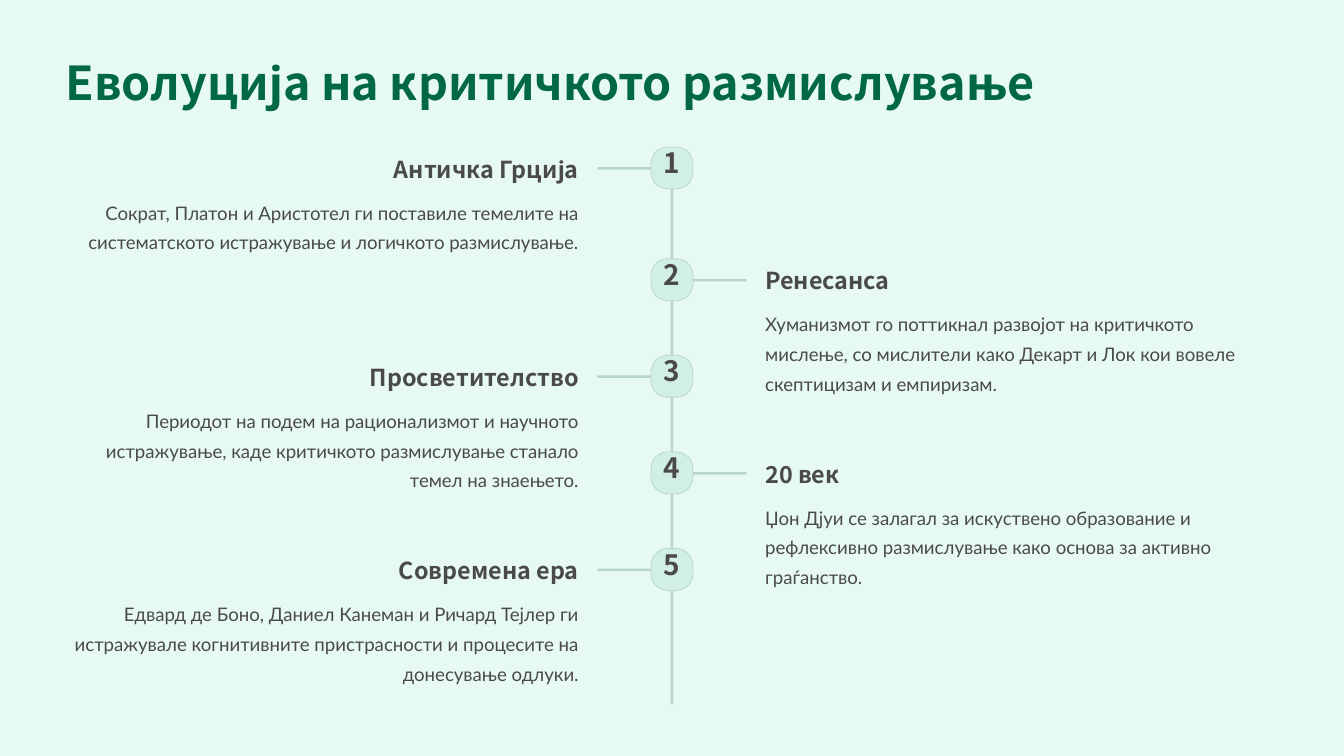
from dataclasses import dataclass

from pptx import Presentation
from pptx.dml.color import RGBColor
from pptx.enum.shapes import MSO_SHAPE
from pptx.enum.text import PP_ALIGN
from pptx.util import Inches, Pt

ROUNDED = MSO_SHAPE.ROUNDED_RECTANGLE
LEFT, CENTER, RIGHT = PP_ALIGN.LEFT, PP_ALIGN.CENTER, PP_ALIGN.RIGHT

COLUMNS, ROWS = 16, 9
WIDTH, HEIGHT = Inches(16), Inches(9)
MARGIN = 0.78
AXIS = COLUMNS / 2
BAR = 0.03
BADGE = 0.5
BRANCH_LENGTH = 0.67
BRANCH_START = 0.22
TEXT_START = 1.11
BODY_WIDTH = 6.11
HEADING_WIDTH = 2.78
FIRST_TOP, SECOND_TOP, STEP = 1.75, 3.08, 1.15


@dataclass(frozen=True)
class Theme:
    background: RGBColor = RGBColor.from_string("E6F9F3")
    line: RGBColor = RGBColor.from_string("B7D5CA")
    badge: RGBColor = RGBColor.from_string("D1EFE4")
    title: RGBColor = RGBColor.from_string("006747")
    text: RGBColor = RGBColor.from_string("4B4A4A")
    heading_font: str = "Noto Sans CJK SC"
    body_font: str = "Lato"


THEME = Theme()


def text_format(size, spacing, name=THEME.heading_font, bold=True, color=THEME.text):
    return {
        "font": {"size": Pt(size), "name": name, "bold": bold},
        "spacing": Pt(spacing),
        "color": color,
    }


TITLE = text_format(40, 50, color=THEME.title)
NUMBER = text_format(24, 24)
HEADING = text_format(20, 25)
BODY = text_format(16, 25.5, THEME.body_font, False)

ERAS = [
    ("Античка Грција",
     "Сократ, Платон и Аристотел ги поставиле темелите на "
     "систематското истражување и логичкото размислување."),
    ("Ренесанса",
     "Хуманизмот го поттикнал развојот на критичкото мислење, "
     "со мислители како Декарт и Лок кои вовеле скептицизам и емпиризам."),
    ("Просветителство",
     "Периодот на подем на рационализмот и научното истражување, "
     "каде критичкото размислување станало темел на знаењето."),
    ("20 век",
     "Џон Дјуи се залагал за искуствено образование и рефлексивно "
     "размислување како основа за активно граѓанство."),
    ("Современа ера",
     "Едвард де Боно, Даниел Канеман и Ричард Тејлер ги истражувале "
     "когнитивните пристрасности и процесите на донесување одлуки."),
]


def place(left, top, width, height):
    column, row = WIDTH / COLUMNS, HEIGHT / ROWS
    return (round(left * column), round(top * row),
            round(width * column), round(height * row))


def add_rounded(slide, box, fill, rounding, outline=None):
    shape = slide.shapes.add_shape(ROUNDED, *place(*box))
    shape.shadow.inherit = False
    shape.adjustments[0] = rounding
    shape.fill.solid()
    shape.fill.fore_color.rgb = fill
    if outline is None:
        shape.line.fill.background()
    else:
        shape.line.color.rgb = outline
        shape.line.width = Pt(0.6)


def add_bar(slide, box):
    add_rounded(slide, box, THEME.line, 0.5)


def add_text(slide, box, text, style, alignment=LEFT, wrap=True):
    frame = slide.shapes.add_textbox(*place(*box)).text_frame
    frame_format = {"word_wrap": wrap, "margin_left": 0, "margin_right": 0,
                    "margin_top": 0, "margin_bottom": 0}
    for name, value in frame_format.items():
        setattr(frame, name, value)
    paragraph = frame.paragraphs[0]
    paragraph.alignment = alignment
    paragraph.line_spacing = style["spacing"]
    run = paragraph.add_run()
    run.text = text
    for name, value in style["font"].items():
        setattr(run.font, name, value)
    run.font.color.rgb = style["color"]


def add_badge(slide, top, number):
    add_rounded(slide, (AXIS - BADGE / 2, top, BADGE, BADGE),
                THEME.badge, 0.4, THEME.line)
    add_text(slide, (AXIS - 0.17, top + 0.05, 0.33, 0.42),
             str(number), NUMBER, CENTER, False)


def add_era(slide, index, heading, body):
    top = SECOND_TOP + (index - 1) * STEP if index else FIRST_TOP
    on_left = index % 2 == 0
    alignment = RIGHT if on_left else LEFT

    def beside_axis(distance, width):
        return AXIS - distance - width if on_left else AXIS + distance

    add_bar(slide, (beside_axis(BRANCH_START, BRANCH_LENGTH), top + 0.24,
                    BRANCH_LENGTH, BAR))
    add_badge(slide, top, index + 1)
    add_text(slide, (beside_axis(TEXT_START, HEADING_WIDTH), top + 0.08,
                     HEADING_WIDTH, 0.35), heading, HEADING, alignment, False)
    add_text(slide, (beside_axis(TEXT_START, BODY_WIDTH), top + 0.56,
                     BODY_WIDTH, 0.71), body, BODY, alignment)


def main():
    presentation = Presentation()
    presentation.slide_width, presentation.slide_height = WIDTH, HEIGHT
    slide = presentation.slides.add_slide(presentation.slide_layouts[6])
    slide.background.fill.solid()
    slide.background.fill.fore_color.rgb = THEME.background
    add_text(slide, (MARGIN, 0.61, COLUMNS - 2 * MARGIN, 0.69),
             "Еволуција на критичкото размислување", TITLE)
    add_bar(slide, (AXIS - BAR / 2, FIRST_TOP, BAR, 6.64))
    for index, (heading, body) in enumerate(ERAS):
        add_era(slide, index, heading, body)
    presentation.save("out.pptx")


if __name__ == "__main__":
    main()
